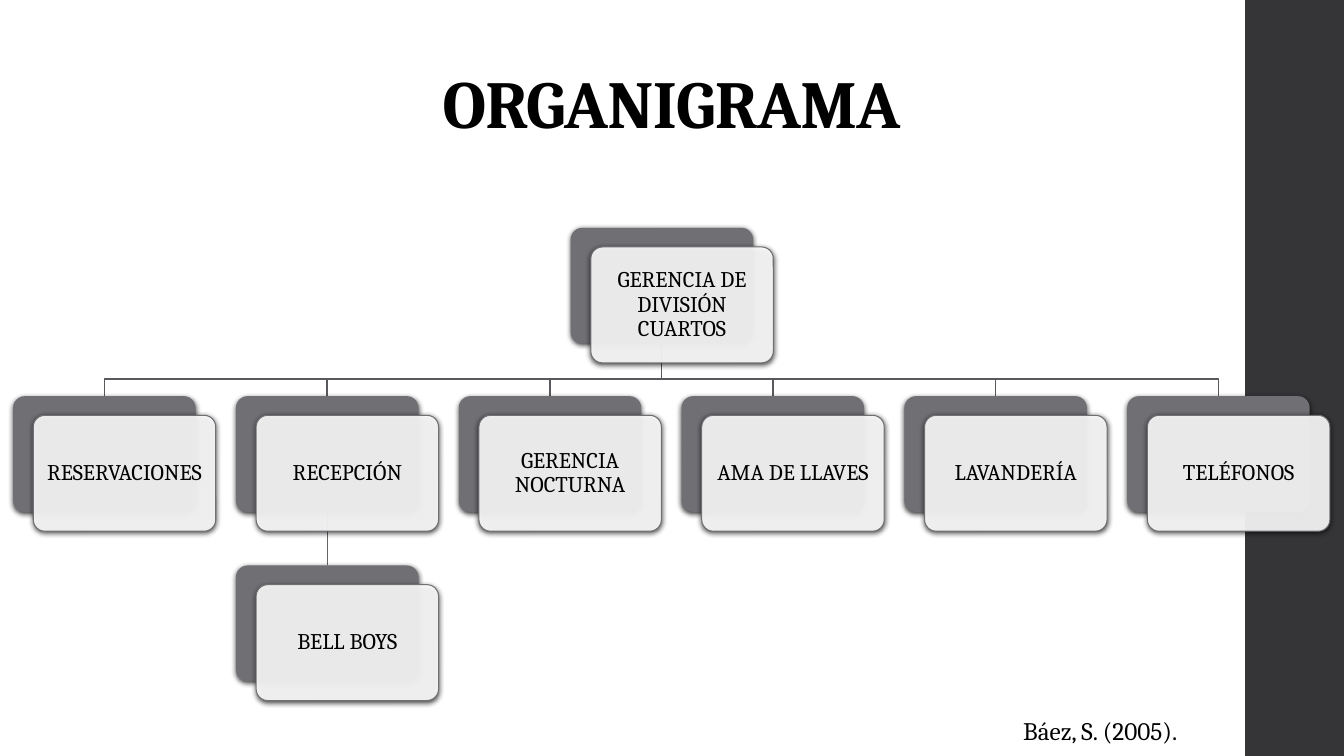
from lxml import etree
from pptx import Presentation
from pptx.dml.color import RGBColor
from pptx.enum.shapes import MSO_CONNECTOR, MSO_SHAPE
from pptx.enum.text import MSO_ANCHOR, PP_ALIGN
from pptx.oxml.ns import qn
from pptx.util import Inches, Pt

RECT = MSO_SHAPE.RECTANGLE
ROUND = MSO_SHAPE.ROUNDED_RECTANGLE
STRAIGHT = MSO_CONNECTOR.STRAIGHT
CENTER = PP_ALIGN.CENTER
LEFT = PP_ALIGN.LEFT
MIDDLE = MSO_ANCHOR.MIDDLE
BOTTOM = MSO_ANCHOR.BOTTOM
TOP = MSO_ANCHOR.TOP

HUES = {
    "band": "353537",
    "back": "6F6F74",
    "card": "FFFFFF",
    "link": "59595D",
    "stem": "656569",
    "text": "000000",
}
COLORS = {name: RGBColor.from_string(hue) for name, hue in HUES.items()}

WIDE, HIGH = 1.81, 1.15
SHIFT_X, SHIFT_Y = 0.2, 0.19
STEP = 2.21
ROW = 3.93
ROOT_X, ROOT_Y = 5.66, 2.26
MID, FOOT, BAR = 6.56, 3.4, 3.76

prs = Presentation()
prs.slide_width = Inches(13.33)
prs.slide_height = Inches(7.5)
slide = prs.slides.add_slide(prs.slide_layouts[6])
shapes = slide.shapes


def write(shape, words, size, align, anchor, space=1.0, inset=0.1):
    frame = shape.text_frame
    frame.word_wrap = True
    frame.vertical_anchor = anchor
    frame.margin_left = frame.margin_right = Inches(inset)
    para = frame.paragraphs[0]
    para.alignment = align
    para.line_spacing = space
    run = para.add_run()
    run.text = words
    run.font.name = "Cambria"
    run.font.size = Pt(size)
    run.font.color.rgb = COLORS["text"]
    return run


def plate(left, top, hue):
    shape = shapes.add_shape(ROUND, Inches(left), Inches(top), Inches(WIDE), Inches(HIGH))
    shape.adjustments[0] = 0.1
    shape.fill.solid()
    shape.fill.fore_color.rgb = COLORS[hue]
    shape.line.fill.background()
    shape.shadow.inherit = False
    glow = etree.SubElement(
        shape.element.spPr.find(qn("a:effectLst")), qn("a:outerShdw"),
        blurRad=str(Pt(4)), dist=str(Pt(1.2)), dir="5400000", rotWithShape="0")
    black = etree.SubElement(glow, qn("a:srgbClr"), val=HUES["text"])
    etree.SubElement(black, qn("a:alpha"), val="75000")
    return shape


band = shapes.add_shape(RECT, Inches(12.35), 0, Inches(0.98), Inches(7.5))
band.fill.solid()
band.fill.fore_color.rgb = COLORS["band"]
band.line.fill.background()
band.shadow.inherit = False

title = shapes.add_textbox(Inches(1.66), Inches(0.42), Inches(10), Inches(1.05))
run = write(title, "ORGANIGRAMA", 48, CENTER, BOTTOM, 0.9)
run.font.bold = True
run.font.element.set("spc", "-50") if hasattr(run.font, "element") else run._r.get_or_add_rPr().set("spc", "-50")

areas = ["RESERVACIONES", "RECEPCIÓN", "GERENCIA NOCTURNA",
         "AMA DE LLAVES", "LAVANDERÍA", "TELÉFONOS"]
nodes = [(ROOT_X, ROOT_Y, "GERENCIA DE DIVISIÓN CUARTOS")]

for col, area in enumerate(areas):
    left = 0.13 + col * STEP
    nodes.append((left, ROW, area))
    drop = left + WIDE / 2
    path = shapes.build_freeform(Inches(MID), Inches(FOOT))
    path.add_line_segments(
        [(Inches(MID), Inches(BAR)), (Inches(drop), Inches(BAR)), (Inches(drop), Inches(ROW))],
        close=False)
    link = path.convert_to_shape()
    link.fill.background()
    link.line.color.rgb = COLORS["link"]
    link.line.width = Pt(1.1)
    link.shadow.inherit = False

stem = shapes.add_connector(STRAIGHT, Inches(3.25), Inches(5.08), Inches(3.25), Inches(5.61))
stem.line.color.rgb = COLORS["stem"]
stem.line.width = Pt(1.1)
etree.SubElement(stem.element.spPr, qn("a:effectLst"))
nodes.append((0.13 + STEP, 5.61, "BELL BOYS"))

for left, top, words in nodes:
    plate(left, top, "back")
    card = plate(left + SHIFT_X, top + SHIFT_Y, "card")
    tint = card.element.spPr.find(qn("a:solidFill")).find(qn("a:srgbClr"))
    etree.SubElement(tint, qn("a:alpha"), val="90000")
    card.line.color.rgb = COLORS["back"]
    card.line.width = Pt(0.75)
    write(card, words, 16, CENTER, MIDDLE, 0.9)

cite = shapes.add_textbox(Inches(10.05), Inches(7.05), Inches(2.08), Inches(0.4))
write(cite, "Báez, S. (2005).", 18, LEFT, TOP)
cite.text_frame.word_wrap = False

prs.save("out.pptx")
